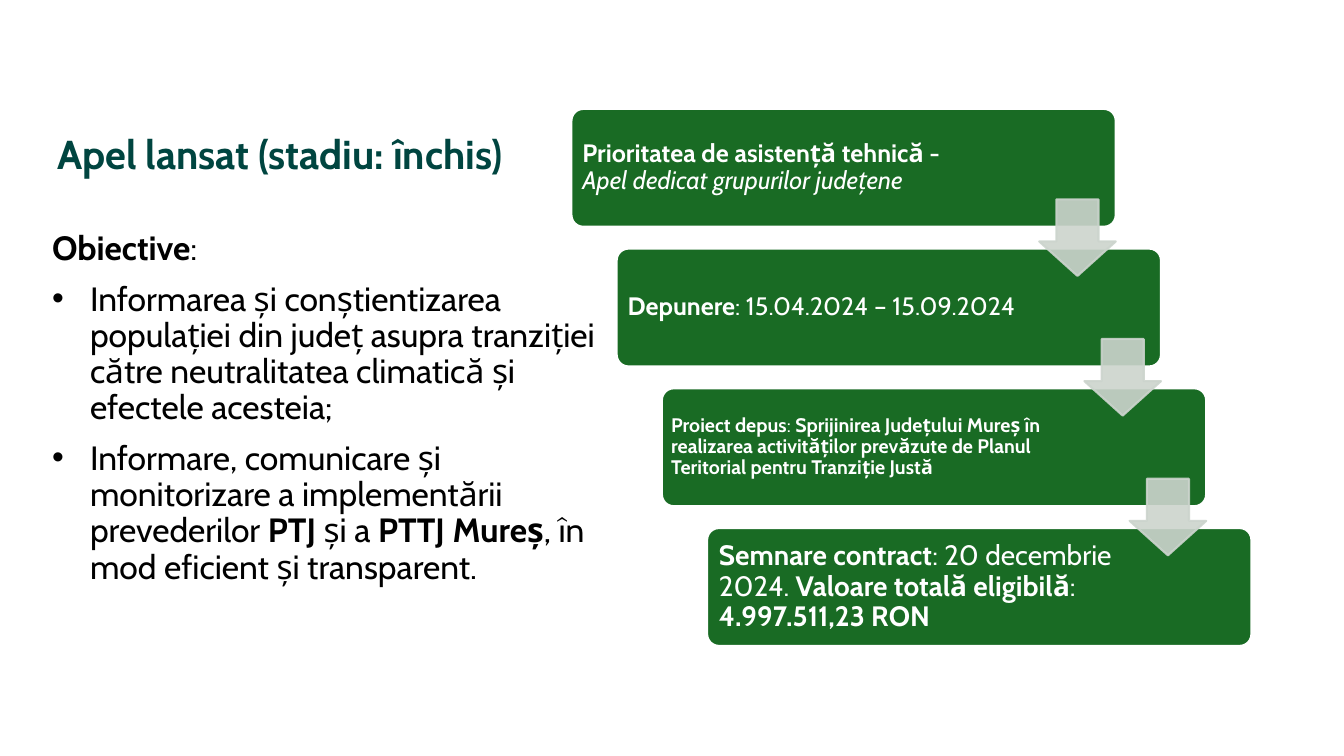
"""Build the slide about the closed call and its four stages."""
from dataclasses import dataclass

import lxml.etree
import pptx
import pptx.dml.color
import pptx.enum.shapes
import pptx.enum.text
import pptx.oxml.ns
import pptx.util

Pt = pptx.util.Pt
RGBColor = pptx.dml.color.RGBColor
Anchor = pptx.enum.text.MSO_ANCHOR
ShapeType = pptx.enum.shapes.MSO_SHAPE
qn = pptx.oxml.ns.qn

FONT = "Cabin"
TEAL = RGBColor(0x00, 0x45, 0x40)
BLACK = RGBColor(0x00, 0x00, 0x00)
WHITE = RGBColor(0xFF, 0xFF, 0xFF)
GREEN = RGBColor(0x19, 0x6B, 0x24)
PALE_GREEN = RGBColor(0xCC, 0xD4, 0xCD)

STAGE_LEFT, STAGE_TOP = 408.2, 77.8
STAGE_WIDTH, STAGE_HEIGHT = 388.8, 84.2
STEP_X, STEP_Y = 32.3, 99.8
TEXT_OFFSET = 2.4
ARROW_LEFT, ARROW_TOP, ARROW_SIZE = 742.3, 142.4, 54.7


@dataclass(frozen=True)
class Run:
    text: str
    bold: bool = False
    italic: bool = False


@dataclass(frozen=True)
class Paragraph:
    runs: tuple[Run, ...]
    bullet: bool = False


@dataclass(frozen=True)
class Stage:
    runs: tuple[Run, ...]
    size: float
    inset: float
    text_width: float = 296.6


OBJECTIVES = (
    Paragraph((Run("Obiective", bold=True), Run(":"))),
    Paragraph((Run("Informarea și conștientizarea populației din județ asupra tranziției "
                   "către neutralitatea climatică și efectele acesteia;"),), bullet=True),
    Paragraph((
        Run("Informare, comunicare și monitorizare a implementării prevederilor "),
        Run("PTJ", bold=True),
        Run(" și a "),
        Run("PTTJ Mureș", bold=True),
        Run(", în mod eficient și transparent."),
    ), bullet=True),
)

STAGES = (
    Stage((Run("Prioritatea de asistență tehnică - ", bold=True),
           Run("Apel dedicat grupurilor județene", italic=True)), 18, 5.4, 290.9),
    Stage((Run("Depunere", bold=True), Run(": 15.04.2024 – 15.09.2024")), 18, 5.4),
    Stage((Run("Proiect depus", bold=True), Run(": "),
           Run("Sprijinirea Județului Mureș în realizarea activităților prevăzute de "
               "Planul Teritorial pentru Tranziție Justă", bold=True)), 14, 4.2),
    Stage((Run("Semnare contract", bold=True), Run(": 20 decembrie 2024. "),
           Run("Valoare totală eligibilă", bold=True), Run(": "),
           Run("4.997.511,23 RON", bold=True)), 20, 6),
)


def add_bullet(paragraph, indent: float) -> None:
    properties = paragraph._p.get_or_add_pPr()
    properties.set("marL", str(Pt(indent)))
    properties.set("indent", str(-Pt(indent)))
    lxml.etree.SubElement(properties, qn("a:buFont"), typeface="Arial")
    lxml.etree.SubElement(properties, qn("a:buChar"), char="•")


def add_text(slide, paragraphs: tuple[Paragraph, ...], left: float, top: float,
             width: float, height: float, *, size: float, color: RGBColor,
             anchor=Anchor.TOP, inset: float | None = None, gap: float = 0) -> None:
    frame = slide.shapes.add_textbox(Pt(left), Pt(top), Pt(width), Pt(height)).text_frame
    frame.word_wrap = True
    frame.vertical_anchor = anchor
    if inset is not None:
        frame.margin_left = frame.margin_right = Pt(inset)
        frame.margin_top = frame.margin_bottom = Pt(inset)
    for index, content in enumerate(paragraphs):
        paragraph = frame.add_paragraph() if index else frame.paragraphs[0]
        if content.bullet:
            add_bullet(paragraph, 27)
        paragraph.line_spacing = 0.9
        paragraph.space_before = Pt(gap if index else 0)
        for piece in content.runs:
            run = paragraph.add_run()
            run.text = piece.text
            run.font.name = FONT
            run.font.size = Pt(size)
            run.font.bold = piece.bold
            run.font.italic = piece.italic
            run.font.color.rgb = color


def add_block(slide, kind, left: float, top: float, width: float, height: float, *,
              fill: RGBColor, line: RGBColor, adjustments: tuple[float, ...],
              opacity: int = 100) -> None:
    shape = slide.shapes.add_shape(kind, Pt(left), Pt(top), Pt(width), Pt(height))
    shape.shadow.inherit = False
    for index, value in enumerate(adjustments):
        shape.adjustments[index] = value
    shape.fill.solid()
    shape.fill.fore_color.rgb = fill
    shape.line.color.rgb = line
    shape.line.width = Pt(1.5)
    if opacity < 100:
        for color in shape._element.spPr.iter(qn("a:srgbClr")):
            lxml.etree.SubElement(color, qn("a:alpha"), val=str(opacity * 1000))


def add_stage(slide, stage: Stage, index: int) -> None:
    left = STAGE_LEFT + index * STEP_X
    top = STAGE_TOP + index * STEP_Y
    add_block(slide, ShapeType.ROUNDED_RECTANGLE, left, top, STAGE_WIDTH, STAGE_HEIGHT,
              fill=GREEN, line=WHITE, adjustments=(0.1,))
    add_text(slide, (Paragraph(stage.runs),), left + TEXT_OFFSET, top + TEXT_OFFSET,
             stage.text_width, STAGE_HEIGHT - 2 * TEXT_OFFSET, size=stage.size,
             color=WHITE, anchor=Anchor.MIDDLE, inset=stage.inset)


def main() -> None:
    presentation = pptx.Presentation()
    presentation.slide_width = Pt(960)
    presentation.slide_height = Pt(540)
    slide = presentation.slides.add_slide(presentation.slide_layouts[6])

    title = Paragraph((Run("Apel lansat (stadiu: închis)", bold=True),))
    add_text(slide, (title,), 33.8, 89.3, 357.8, 41.8, size=28.8, color=TEAL,
             anchor=Anchor.BOTTOM)
    add_text(slide, OBJECTIVES, 30.2, 162, 404.6, 337.7, size=24, color=BLACK, gap=10)

    for index, stage in enumerate(STAGES):
        add_stage(slide, stage, index)
    for index in range(len(STAGES) - 1):
        add_block(slide, ShapeType.DOWN_ARROW, ARROW_LEFT + index * STEP_X,
                  ARROW_TOP + index * STEP_Y, ARROW_SIZE, ARROW_SIZE, fill=PALE_GREEN,
                  line=PALE_GREEN, adjustments=(0.55, 0.45), opacity=90)

    presentation.save("out.pptx")


if __name__ == "__main__":
    main()
